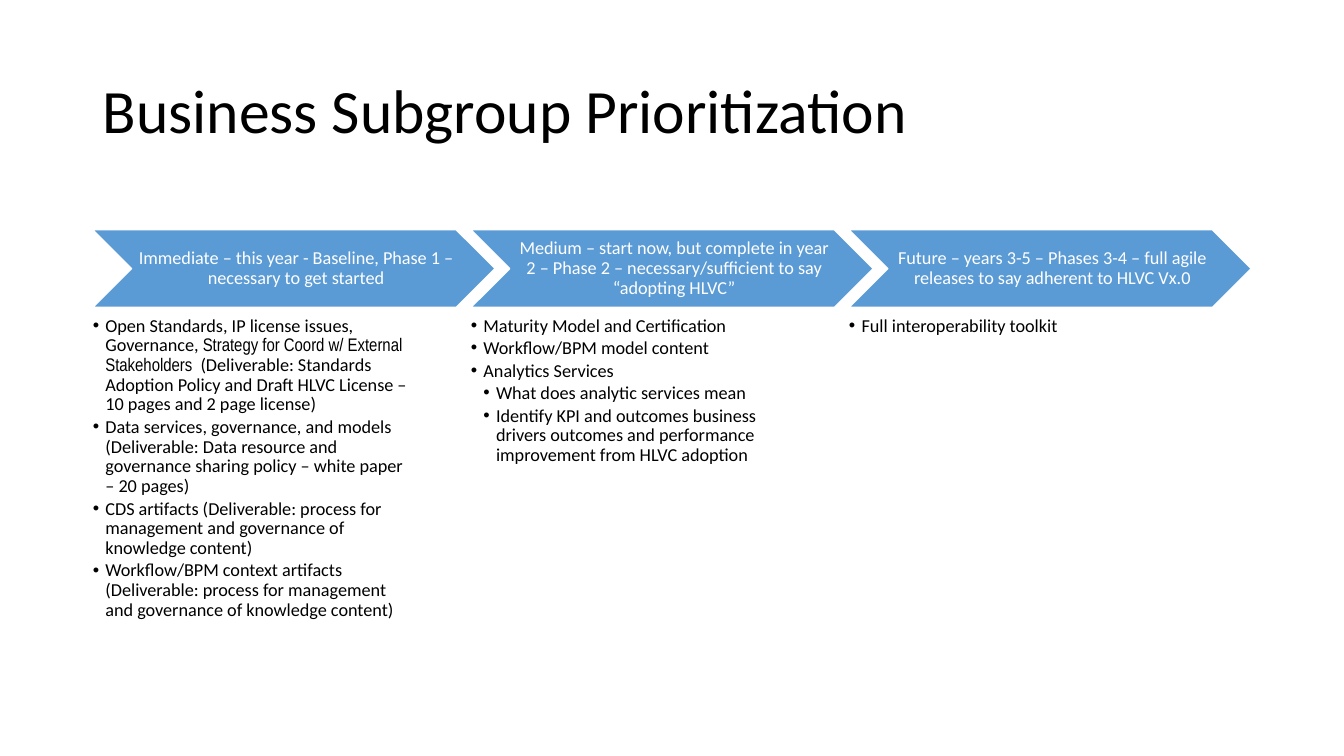
"""Build the slide on business subgroup prioritization."""
from lxml.etree import SubElement
from pptx import Presentation
from pptx.dml.color import RGBColor
from pptx.enum.shapes import MSO_SHAPE
from pptx.enum.text import MSO_ANCHOR, MSO_AUTO_SIZE, PP_ALIGN
from pptx.oxml.ns import qn
from pptx.util import Inches, Pt

BLUE = RGBColor(0x5B, 0x9B, 0xD5)
WHITE = RGBColor(0xFF, 0xFF, 0xFF)
BLACK = RGBColor(0, 0, 0)
FONT = "Calibri"
NARROW = "Arial Narrow"
LEFT, STEP = 0.92, 3.75

PHASES = [
    ("Immediate – this year - Baseline, Phase 1 – necessary to get started", [
        (0, ["Open Standards, IP license issues, Governance, ",
             "Strategy for Coord w/ External Stakeholders ",
             " (Deliverable: Standards Adoption Policy and Draft HLVC License – "
             "10 pages and 2 page license)"]),
        (0, ["Data services, governance, and models (Deliverable: Data resource "
             "and governance sharing policy – white paper – 20 pages)"]),
        (0, ["CDS artifacts (Deliverable: process for management and governance "
             "of knowledge content)"]),
        (0, ["Workflow/BPM context artifacts (Deliverable: process for "
             "management and governance of knowledge content)"]),
    ]),
    ("Medium – start now, but complete in year 2 – Phase 2 – "
     "necessary/sufficient to say “adopting HLVC”", [
         (0, ["Maturity Model and Certification"]),
         (0, ["Workflow/BPM model content"]),
         (0, ["Analytics Services"]),
         (1, ["What does analytic services mean"]),
         (1, ["Identify KPI and outcomes business drivers outcomes and "
              "performance improvement from HLVC adoption"]),
     ]),
    ("Future – years 3-5 – Phases 3-4 – full agile releases to say adherent "
     "to HLVC Vx.0", [
         (0, ["Full interoperability toolkit"]),
     ]),
]


def style(run, size, color, name=FONT):
    """Set the font of a run."""
    run.font.size = Pt(size)
    run.font.name = name
    run.font.color.rgb = color


def inset(frame, left, rest):
    """Set the margins of a text frame and let it wrap."""
    frame.word_wrap = True
    frame.margin_left = Inches(left)
    frame.margin_top = frame.margin_right = frame.margin_bottom = Inches(rest)


def bullet(para, level):
    """Give a paragraph a hanging bullet."""
    para.level = level
    props = para._p.get_or_add_pPr()
    props.set("marL", str(Inches(0.125 * (level + 1))))
    props.set("indent", str(Inches(-0.125)))
    SubElement(props, qn("a:buFont"), typeface="Arial")
    SubElement(props, qn("a:buChar"), char="•")


def add_title(slide, text):
    """Fill and place the title."""
    title = slide.shapes.title
    title.left, title.top = Inches(LEFT), Inches(0.4)
    title.width, title.height = Inches(11.5), Inches(1.45)
    frame = title.text_frame
    frame.text = text
    frame.auto_size = MSO_AUTO_SIZE.NONE
    frame.vertical_anchor = MSO_ANCHOR.MIDDLE
    para = frame.paragraphs[0]
    para.alignment = PP_ALIGN.LEFT
    para.line_spacing = 0.9
    style(para.runs[0], 44, BLACK)


def add_phase(slide, left, text):
    """Draw one chevron with its label."""
    shape = slide.shapes.add_shape(
        MSO_SHAPE.CHEVRON, Inches(left), Inches(2.28), Inches(3.99), Inches(0.77))
    shape.shadow.inherit = False
    shape.fill.solid()
    shape.fill.fore_color.rgb = BLUE
    shape.line.color.rgb = WHITE
    shape.line.width = Pt(1)
    frame = shape.text_frame
    frame.text = text
    inset(frame, 0.06, 0.02)
    frame.vertical_anchor = MSO_ANCHOR.MIDDLE
    para = frame.paragraphs[0]
    para.alignment = PP_ALIGN.CENTER
    para.line_spacing = 0.9
    style(para.runs[0], 13, WHITE)


def add_list(slide, left, items):
    """Write the bullet list below a chevron."""
    box = slide.shapes.add_textbox(
        Inches(left), Inches(3.14), Inches(3.19), Inches(3.33))
    frame = box.text_frame
    inset(frame, 0, 0)
    for row, (level, parts) in enumerate(items):
        para = frame.add_paragraph() if row else frame.paragraphs[0]
        para.line_spacing = 0.9
        para.space_after = Pt(2)
        bullet(para, level)
        for spot, part in enumerate(parts):
            run = para.add_run()
            run.text = part
            style(run, 13, BLACK, NARROW if spot == 1 else FONT)


def main():
    """Build and save the slide."""
    deck = Presentation()
    deck.slide_width, deck.slide_height = Inches(13.33), Inches(7.5)
    slide = deck.slides.add_slide(deck.slide_layouts.get_by_name("Title Only"))
    add_title(slide, "Business Subgroup Prioritization")
    for col, (label, items) in enumerate(PHASES):
        left = LEFT + col * STEP
        add_phase(slide, left, label)
        add_list(slide, left, items)
    deck.save("out.pptx")


if __name__ == "__main__":
    main()
